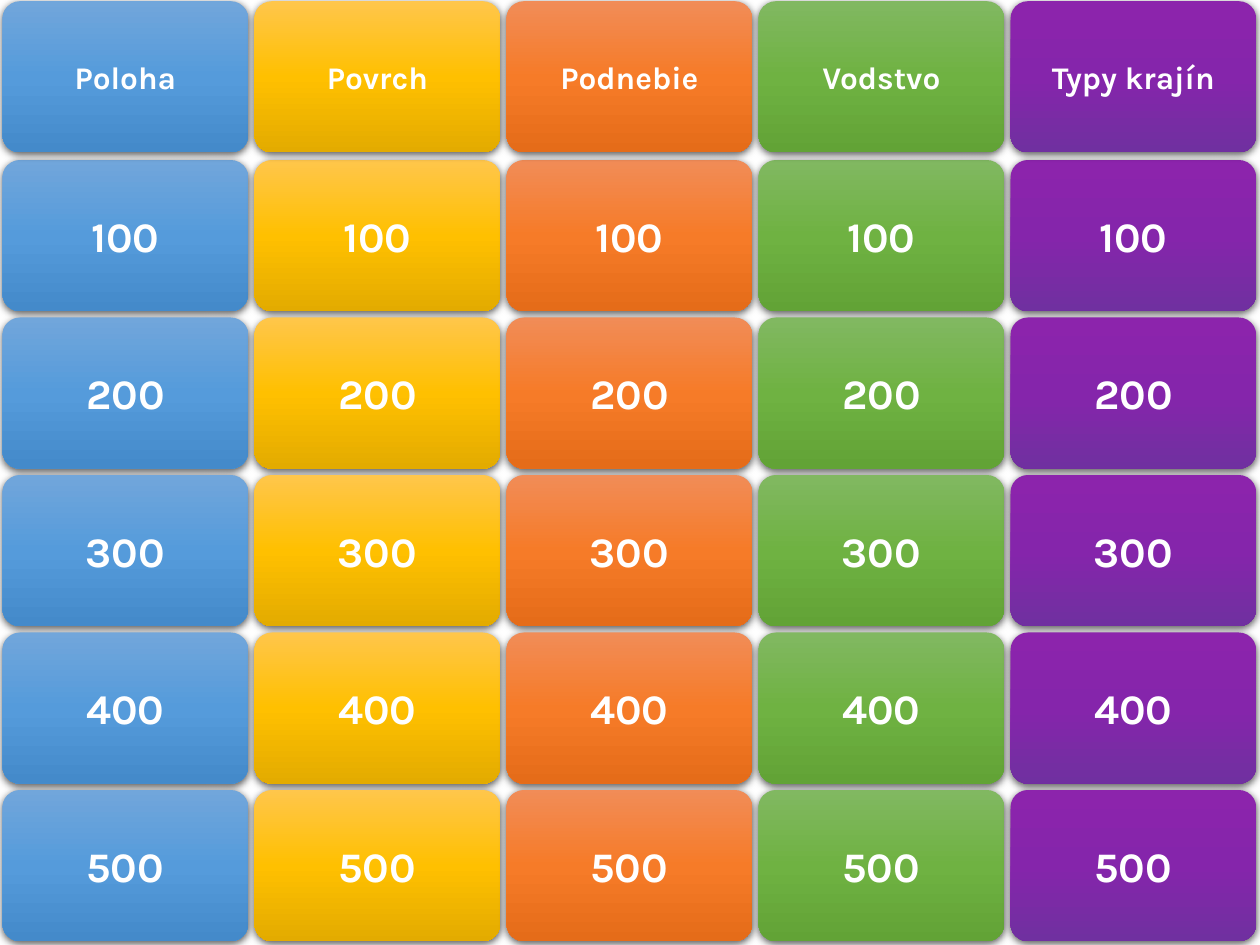
from dataclasses import dataclass

from pptx import Presentation
from pptx.dml.color import RGBColor
from pptx.enum.shapes import MSO_SHAPE
from pptx.enum.text import MSO_ANCHOR, PP_ALIGN
from pptx.oxml import parse_xml
from pptx.oxml.ns import nsdecls, qn
from pptx.util import Inches, Pt


@dataclass(frozen=True)
class Theme:
    font: str = "Karla"
    text: str = "FFFFFF"
    shadow: str = "000000"
    header_size: int = 18
    value_size: int = 24
    blue: tuple = ("71A6DB", "559BDB", "448ACA")
    yellow: tuple = ("FFC64B", "FFC000", "E3AB00")
    orange: tuple = ("F18C57", "F67B28", "E56C19")
    green: tuple = ("81B861", "6FB242", "62A336")
    purple: tuple = ("8C24AC", "8525AB", "7030A0")


THEME = Theme()
CATEGORIES = [
    ("Poloha", THEME.blue),
    ("Povrch", THEME.yellow),
    ("Podnebie", THEME.orange),
    ("Vodstvo", THEME.green),
    ("Typy krajín", THEME.purple),
]
VALUES = ["100", "200", "300", "400", "500"]

COLUMN_PITCH, ROW_PITCH = 2, 1.25
TILE_WIDTH, TILE_HEIGHT = 1.95, 1.2
BOARD_LEFT, HEADER_TOP, VALUES_TOP = 0.02, 0.01, 1.27


def fill_gradient(shape, colors):
    """Fill from top to bottom with evenly spaced colours."""
    shape.fill.gradient()
    shape.fill.gradient_angle = 270
    stops = shape.fill._xPr.find(qn("a:gradFill")).find(qn("a:gsLst"))
    for stop in list(stops):
        stops.remove(stop)
    for index, color in enumerate(colors):
        position = 100000 * index // (len(colors) - 1)
        stops.append(parse_xml(
            f'<a:gs {nsdecls("a")} pos="{position}"><a:srgbClr val="{color}"/></a:gs>'))


def add_drop_shadow(shape):
    shape.shadow.inherit = False
    effects = shape._element.spPr.find(qn("a:effectLst"))
    effects.append(parse_xml(
        f'<a:outerShdw {nsdecls("a")} blurRad="{Pt(4.5)}" dist="{Pt(1.5)}" '
        f'dir="5400000" algn="ctr" rotWithShape="0"><a:srgbClr val="{THEME.shadow}">'
        '<a:alpha val="63000"/></a:srgbClr></a:outerShdw>'))


def add_tile(page, box, label, size, colors):
    tile = page.shapes.add_shape(
        MSO_SHAPE.ROUNDED_RECTANGLE, *(Inches(length) for length in box))
    tile.adjustments[0] = 0.115
    fill_gradient(tile, colors)
    tile.line.fill.background()
    add_drop_shadow(tile)

    frame = tile.text_frame
    frame.word_wrap = True
    frame.vertical_anchor = MSO_ANCHOR.MIDDLE
    para = frame.paragraphs[0]
    para.alignment = PP_ALIGN.CENTER
    span = para.add_run()
    span.text = label
    span.font.name = THEME.font
    span.font.size = Pt(size)
    span.font.bold = True
    span.font.color.rgb = RGBColor.from_string(THEME.text)


def add_category(page, left, title, colors):
    """Place one column: its value tiles below its header tile."""
    for row, value in enumerate(VALUES):
        box = (left, VALUES_TOP + row * ROW_PITCH, TILE_WIDTH, TILE_HEIGHT)
        add_tile(page, box, value, THEME.value_size, colors)
    box = (left, HEADER_TOP, TILE_WIDTH, TILE_HEIGHT)
    add_tile(page, box, title, THEME.header_size, colors)


def main():
    deck = Presentation()
    deck.slide_width, deck.slide_height = Inches(10), Inches(7.5)
    page = deck.slides.add_slide(deck.slide_layouts[6])
    for column, (title, colors) in enumerate(CATEGORIES):
        add_category(page, BOARD_LEFT + column * COLUMN_PITCH, title, colors)
    deck.save("out.pptx")


if __name__ == "__main__":
    main()
